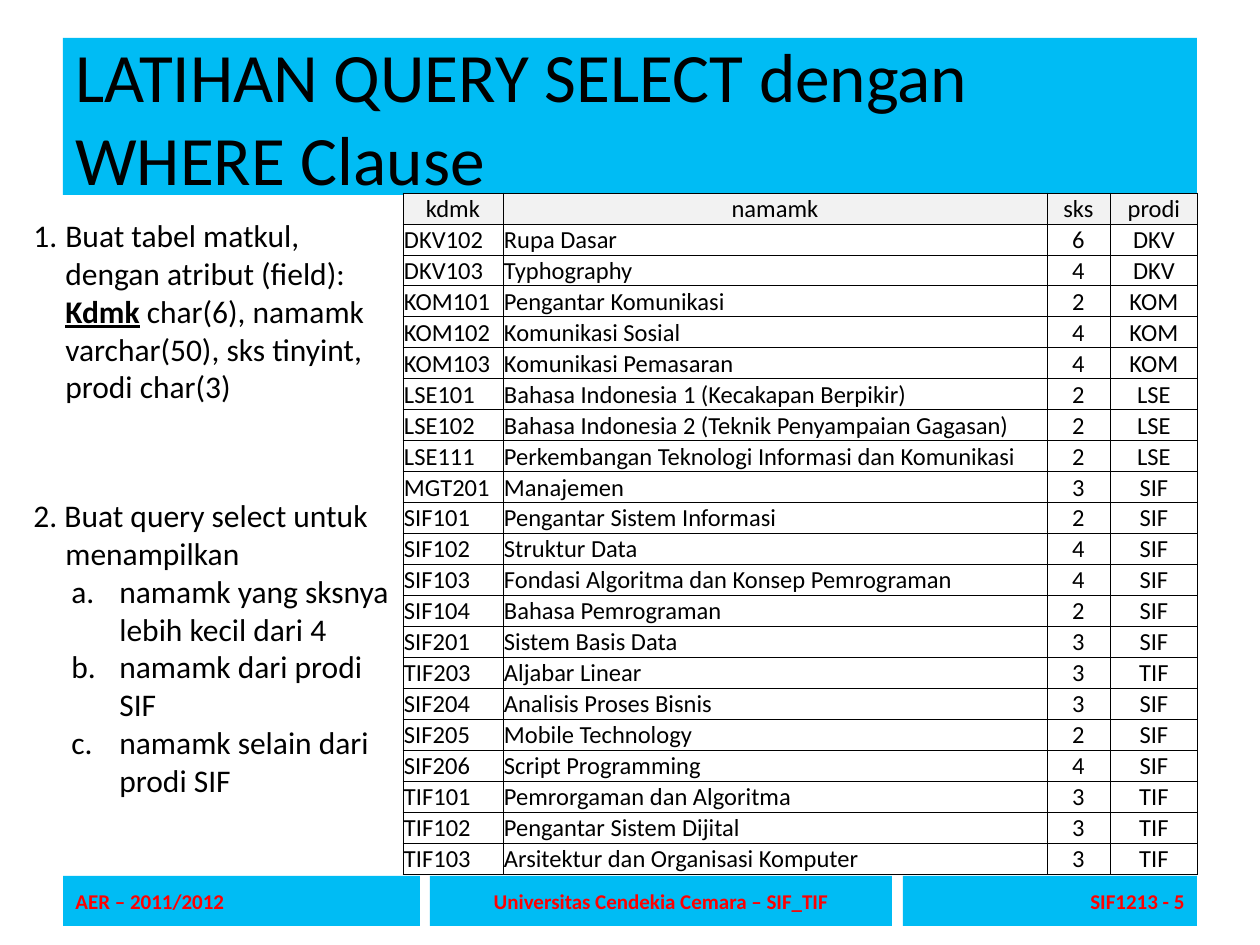
from dataclasses import dataclass

from lxml import etree
from pptx import Presentation
from pptx.dml.color import RGBColor
from pptx.enum.shapes import MSO_SHAPE
from pptx.enum.text import MSO_ANCHOR, PP_ALIGN
from pptx.oxml.ns import qn
from pptx.util import Emu, Pt

RECT = MSO_SHAPE.RECTANGLE
MIDDLE, BOTTOM, TOP = MSO_ANCHOR.MIDDLE, MSO_ANCHOR.BOTTOM, MSO_ANCHOR.TOP
LEFT, CENTER, RIGHT = PP_ALIGN.LEFT, PP_ALIGN.CENTER, PP_ALIGN.RIGHT

PX = 914400 / 126
FONT = "Calibri"
COLORS = {"bar": "00BCF4", "text": "000000", "footer": "FF0000", "header": "F2F2F2"}


@dataclass
class Run:
    text: str
    strong: bool = False


@dataclass
class Para:
    runs: list[Run]
    margin: int = 0
    indent: int = 0
    numbering: str = ""


@dataclass
class Bar:
    left: int
    top: int
    width: int
    height: int
    text: str
    size: float
    color: str
    bold: bool
    align: PP_ALIGN


@dataclass
class Note:
    left: int
    top: int
    width: int
    height: int
    paras: list[Para]


BARS = [
    Bar(63, 38, 1134, 157, "LATIHAN QUERY SELECT dengan WHERE Clause", 39.6, "text", False, LEFT),
    Bar(63, 876, 357, 50, "AER – 2011/2012", 12, "footer", True, LEFT),
    Bar(430, 876, 462, 50, "Universitas Cendekia Cemara – SIF_TIF", 12, "footer", True, CENTER),
    Bar(903, 876, 294, 50, "SIF1213 - 5", 12, "footer", True, RIGHT),
]

QUERIES = ["namamk yang sksnya lebih kecil dari 4", "namamk dari prodi SIF",
           "namamk selain dari prodi SIF"]
NOTES = [
    Note(21, 210, 357, 204, [
        Para([Run("Buat tabel matkul, dengan atribut (field):")], 32, -32, "arabicPeriod"),
        Para([Run("Kdmk", True),
              Run(" char(6), namamk varchar(50), sks tinyint, prodi char(3)")], 32),
    ]),
    Note(21, 490, 383, 318, [
        Para([Run("2. Buat query select untuk menampilkan")], 32, -32),
        *[Para([Run(q)], 86, -48, "alphaLcPeriod") for q in QUERIES],
    ]),
]

TABLE_LEFT, TABLE_TOP, ROW_HEIGHT = 403, 193, 31
COL_WIDTHS = [100, 544, 63, 88]
COL_ALIGNS = [LEFT, LEFT, CENTER, CENTER]
HEADER = ("kdmk", "namamk", "sks", "prodi")
COURSES = [
    ("DKV102", "Rupa Dasar", "6", "DKV"),
    ("DKV103", "Typhography", "4", "DKV"),
    ("KOM101", "Pengantar Komunikasi", "2", "KOM"),
    ("KOM102", "Komunikasi Sosial", "4", "KOM"),
    ("KOM103", "Komunikasi Pemasaran", "4", "KOM"),
    ("LSE101", "Bahasa Indonesia 1 (Kecakapan Berpikir)", "2", "LSE"),
    ("LSE102", "Bahasa Indonesia 2 (Teknik Penyampaian Gagasan)", "2", "LSE"),
    ("LSE111", "Perkembangan Teknologi Informasi dan Komunikasi", "2", "LSE"),
    ("MGT201", "Manajemen", "3", "SIF"),
    ("SIF101", "Pengantar Sistem Informasi", "2", "SIF"),
    ("SIF102", "Struktur Data", "4", "SIF"),
    ("SIF103", "Fondasi Algoritma dan Konsep Pemrograman", "4", "SIF"),
    ("SIF104", "Bahasa Pemrograman", "2", "SIF"),
    ("SIF201", "Sistem Basis Data", "3", "SIF"),
    ("TIF203", "Aljabar Linear", "3", "TIF"),
    ("SIF204", "Analisis Proses Bisnis", "3", "SIF"),
    ("SIF205", "Mobile Technology", "2", "SIF"),
    ("SIF206", "Script Programming", "4", "SIF"),
    ("TIF101", "Pemrorgaman dan Algoritma", "3", "TIF"),
    ("TIF102", "Pengantar Sistem Dijital", "3", "TIF"),
    ("TIF103", "Arsitektur dan Organisasi Komputer", "3", "TIF"),
]


def px(n: int) -> Emu:
    return Emu(round(n * PX))


def rgb(name: str) -> RGBColor:
    return RGBColor.from_string(COLORS[name])


def add_run(p, text: str, size: float, color: str = "text", bold: bool = False):
    r = p.add_run()
    r.text = text
    r.font.name, r.font.size, r.font.bold = FONT, Pt(size), bold
    r.font.color.rgb = rgb(color)
    return r


def draw_bar(s, bar: Bar) -> None:
    sp = s.shapes.add_shape(RECT, px(bar.left), px(bar.top), px(bar.width), px(bar.height))
    sp.shadow.inherit = False
    sp.fill.solid()
    sp.fill.fore_color.rgb = rgb("bar")
    sp.line.fill.background()
    tf = sp.text_frame
    tf.word_wrap, tf.vertical_anchor = True, MIDDLE
    p = tf.paragraphs[0]
    p.alignment = bar.align
    add_run(p, bar.text, bar.size, bar.color, bar.bold)


def draw_note(s, note: Note) -> None:
    sp = s.shapes.add_textbox(px(note.left), px(note.top), px(note.width), px(note.height))
    tf = sp.text_frame
    tf.word_wrap, tf.vertical_anchor = True, TOP
    for i, para in enumerate(note.paras):
        p = tf.add_paragraph() if i else tf.paragraphs[0]
        pPr = p._p.get_or_add_pPr()
        pPr.set("marL", str(px(para.margin)))
        pPr.set("indent", str(px(para.indent)))
        if para.numbering:
            etree.SubElement(pPr, qn("a:buFont"), typeface="+mj-lt")
            etree.SubElement(pPr, qn("a:buAutoNum"), type=para.numbering)
        for run in para.runs:
            r = add_run(p, run.text, 18, bold=run.strong)
            r.font.underline = run.strong


def add_borders(cell) -> None:
    tcPr = cell._tc.get_or_add_tcPr()
    for side in ("a:lnL", "a:lnR", "a:lnT", "a:lnB"):
        ln = etree.SubElement(tcPr, qn(side), w=str(Pt(0.5)))
        fill = etree.SubElement(ln, qn("a:solidFill"))
        etree.SubElement(fill, qn("a:srgbClr"), val=COLORS["text"])


def draw_table(s) -> None:
    rows = [HEADER, *COURSES]
    tbl = s.shapes.add_table(len(rows), len(HEADER), px(TABLE_LEFT), px(TABLE_TOP),
                             px(sum(COL_WIDTHS)), px(ROW_HEIGHT * len(rows))).table
    tbl.first_row = tbl.horz_banding = False
    for col, width in zip(tbl.columns, COL_WIDTHS):
        col.width = px(width)
    for i, values in enumerate(rows):
        tbl.rows[i].height = px(ROW_HEIGHT)
        for j, value in enumerate(values):
            cell = tbl.cell(i, j)
            cell.margin_left = cell.margin_right = cell.margin_top = px(1)
            cell.margin_bottom = 0
            cell.vertical_anchor = MIDDLE if i else BOTTOM
            add_borders(cell)
            if i:
                cell.fill.background()
            else:
                cell.fill.solid()
                cell.fill.fore_color.rgb = rgb("header")
            p = cell.text_frame.paragraphs[0]
            p.alignment = COL_ALIGNS[j] if i else CENTER
            add_run(p, value, 14)


def main() -> None:
    prs = Presentation()
    prs.slide_width, prs.slide_height = px(1260), px(945)
    s = prs.slides.add_slide(prs.slide_layouts[6])
    for bar in BARS:
        draw_bar(s, bar)
    draw_table(s)
    for note in NOTES:
        draw_note(s, note)
    prs.save("out.pptx")


if __name__ == "__main__":
    main()
